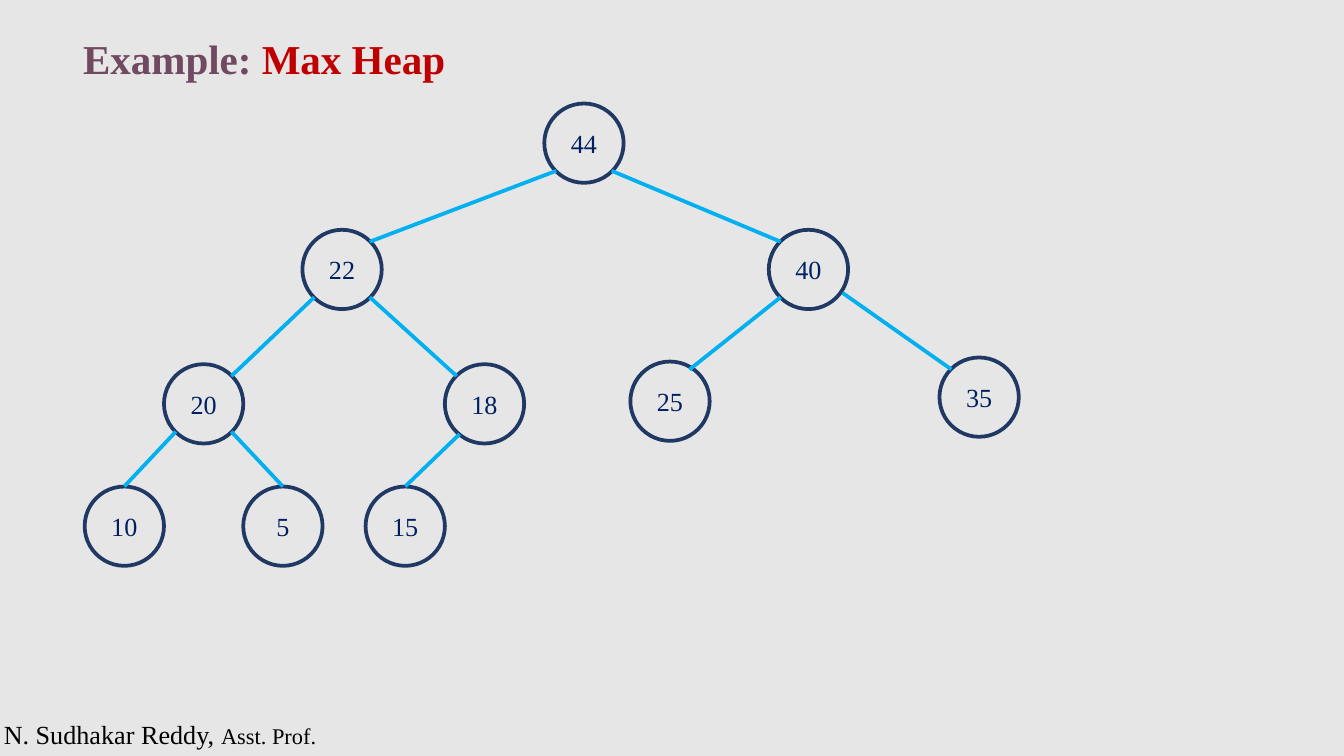
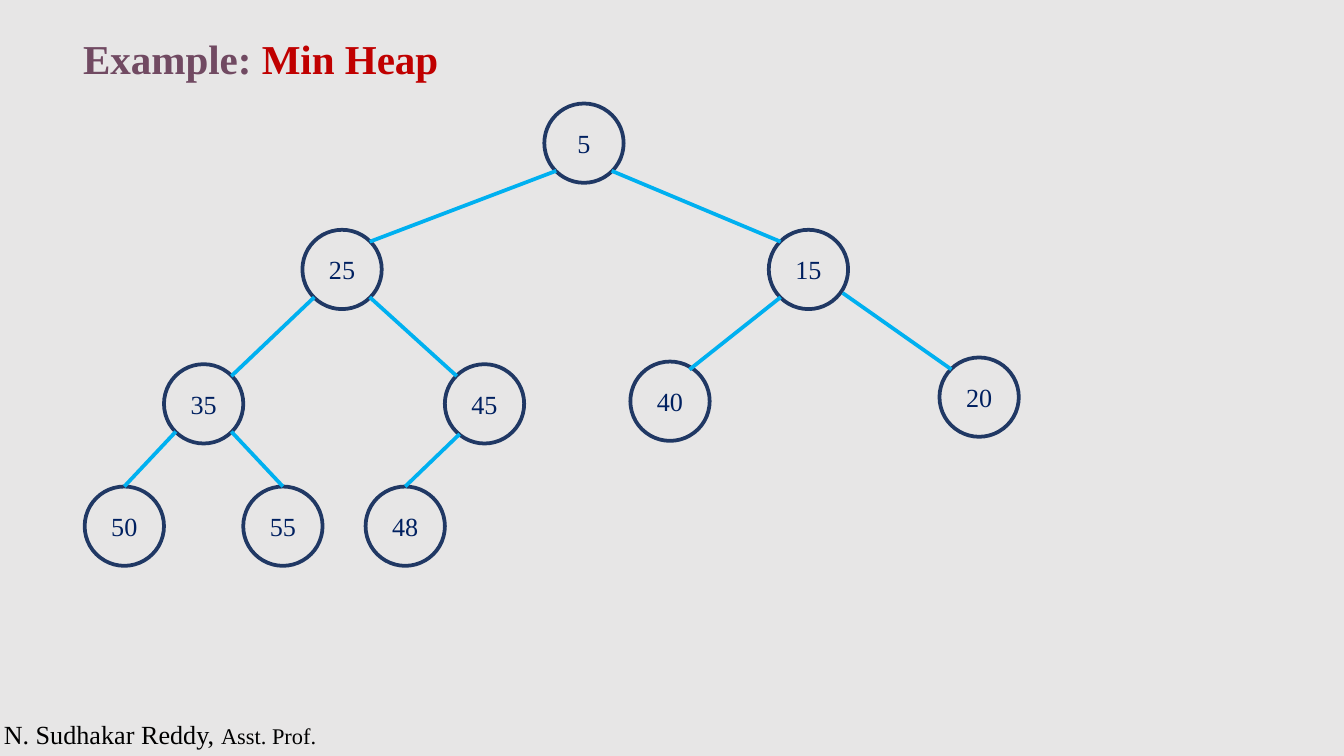
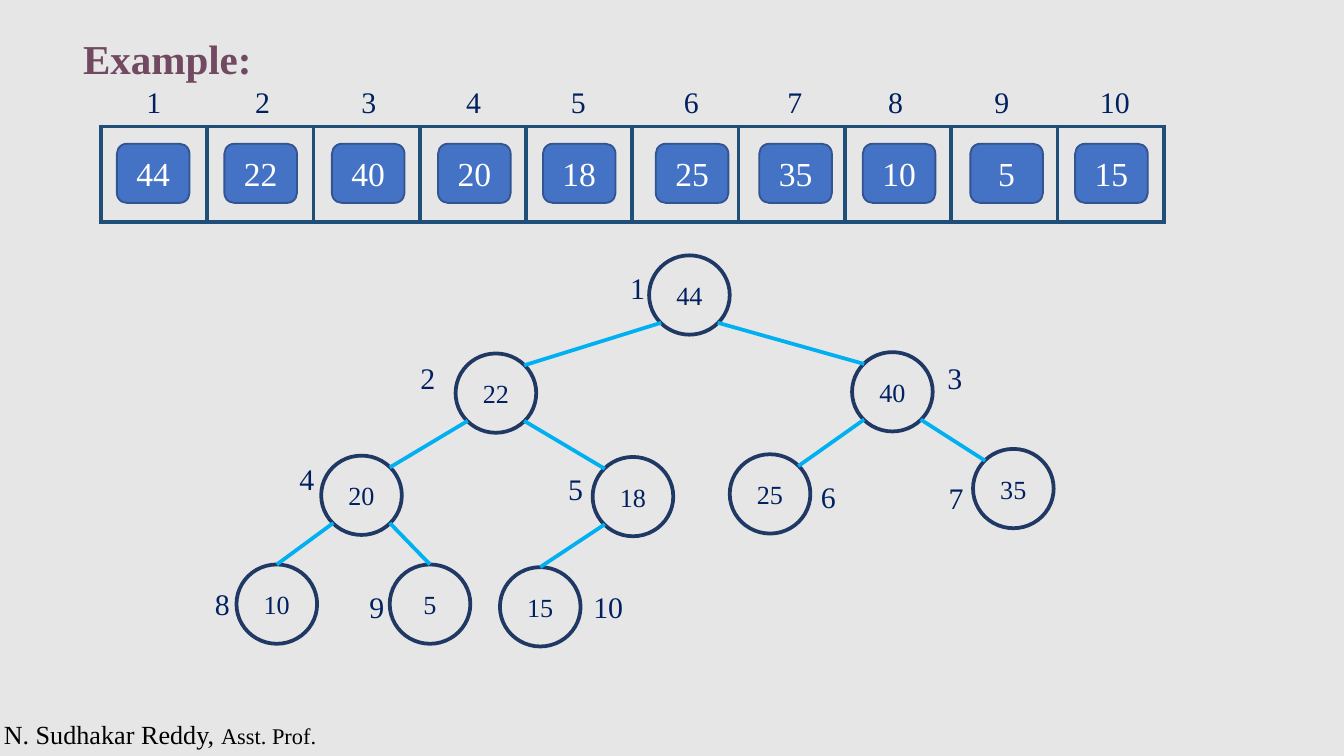
from pptx import Presentation
from pptx import util as u
from pptx.dml.color import RGBColor
from pptx.enum import shapes as kinds, text as txt
from pptx.oxml import xmlchemy

# Theme
THEME = {
    "font": "Times New Roman", "background": "E7E6E6",
    "title": {"size": 22, "color": "714A62", "bold": True},
    "heap_kind": {"size": 22, "color": "C00000", "bold": True},
    "author": {"size": 14, "color": "000000"},
    "role": {"size": 12, "color": "000000"},
    "key": {"size": 14, "color": "002060"},
    "index": {"size": 16, "color": "002060"},
    "chip": {"size": 18, "color": "FFFFFF"},
    "node_line": ("203864", 2), "edge_line": ("00B0F0", 2),
    "chip_line": ("325491", 1), "chip_fill": "4472C4",
    "cell_line": ("1F4E79", 2.25),
}

# Content: heap keys and node corners run in level order
FOOTER = [("N. Sudhakar Reddy, ", "author"), ("Asst. Prof.", "role")]
MAX_KEYS = [44, 22, 40, 20, 18, 25, 35, 10, 5, 15]
MIN_KEYS = [5, 25, 15, 35, 45, 40, 20, 50, 55, 48]
LARGE_TREE = {
    "node": (0.59, 0.59),
    "corners": [(4.05, 0.77), (2.25, 1.71), (5.72, 1.71), (1.22, 2.71), (3.31, 2.71),
                (4.69, 2.69), (6.99, 2.66), (0.63, 3.62), (1.81, 3.62), (2.72, 3.62)],
    # Edge ends that leave the usual touching points, by child
    "starts": {6: (6.27, 2.18), 9: (3.42, 3.23)},
    "ends": {5: (5.13, 2.75)},
}
INDEXED_TREE = {
    "node": (0.6, 0.59),
    "corners": [(4.83, 1.9), (3.39, 2.63), (6.34, 2.62), (2.39, 3.39), (4.41, 3.4),
                (5.43, 3.38), (7.24, 3.34), (1.76, 4.2), (2.9, 4.2), (3.72, 4.22)],
    "starts": {}, "ends": {},
}
NODE_INDEXES = [(4.59, 1.96), (3.03, 2.63), (6.95, 2.63), (2.13, 3.38), (4.13, 3.45),
                (6.01, 3.51), (6.96, 3.52), (1.5, 4.31), (2.65, 4.33), (4.15, 4.33)]
CHIP_LEFTS = [0.87, 1.67, 2.47, 3.26, 4.04, 4.88, 5.65, 6.42, 7.22, 8]
CELL_INDEX_LEFTS = [0.99, 1.8, 2.59, 3.37, 4.15, 4.99, 5.76, 6.51, 7.3, 7.92]
SLIDES = [
    {"title": [("Example: ", "title"), ("Max Heap", "heap_kind")],
     "keys": MAX_KEYS, "tree": LARGE_TREE},
    {"title": [("Example: ", "title"), ("Min Heap", "heap_kind")],
     "keys": MIN_KEYS, "tree": LARGE_TREE},
    {"title": [("Example:", "title")],
     "keys": MAX_KEYS, "tree": INDEXED_TREE, "array": True},
]
CORNER = 0.15  # where a diagonal meets the circle, as a share of its box


def inches(*lengths):
    return [u.Inches(length) for length in lengths]


def write(frame, runs, **paragraph_format):
    paragraph = frame.paragraphs[0]
    for name, value in paragraph_format.items():
        setattr(paragraph, name, value)
    for words, style in runs:
        run = paragraph.add_run()
        run.text = words
        look = THEME[style]
        font_format = {"name": THEME["font"], "size": u.Pt(look["size"]),
                       "bold": look.get("bold", False)}
        for name, value in font_format.items():
            setattr(run.font, name, value)
        run.font.color.rgb = RGBColor.from_string(look["color"])


def add_text(shapes, box, runs, grow=True, **paragraph_format):
    frame = shapes.add_textbox(*inches(*box)).text_frame
    frame.word_wrap = True
    if grow:
        frame.auto_size = txt.MSO_AUTO_SIZE.SHAPE_TO_FIT_TEXT
    write(frame, runs, **paragraph_format)


def set_line(line, look):
    line.color.rgb = RGBColor.from_string(look[0])
    line.width = u.Pt(look[1])


def add_box(shapes, preset, box, key, style, line, fill=None):
    shape = shapes.add_shape(preset, *inches(*box))
    shape.shadow.inherit = False
    if fill:
        shape.fill.solid()
        shape.fill.fore_color.rgb = RGBColor.from_string(fill)
    else:
        shape.fill.background()
    set_line(shape.line, line)
    shape.text_frame.vertical_anchor = txt.MSO_ANCHOR.MIDDLE
    write(shape.text_frame, [(str(key), style)], alignment=txt.PP_ALIGN.CENTER)


def add_indexes(shapes, corners):
    for number, corner in enumerate(corners, 1):
        wide = number == 10
        add_text(shapes, (*corner, 0.75 if wide else 0.33, 0.37), [(str(number), "index")],
                 alignment=txt.PP_ALIGN.CENTER if wide else txt.PP_ALIGN.LEFT)


def add_tree(slide, keys, tree):
    shapes = slide.shapes.add_group_shape().shapes
    corners, (width, height) = tree["corners"], tree["node"]

    def touch(node, across, down):
        left, top = corners[node]
        return left + across * width, top + down * height

    for key, corner in zip(keys, corners):
        add_box(shapes, kinds.MSO_SHAPE.OVAL, (*corner, width, height), key, "key",
                THEME["node_line"])
    for child in range(1, len(keys)):
        side = CORNER if child % 2 else 1 - CORNER
        start = tree["starts"].get(child) or touch((child - 1) // 2, side, 1 - CORNER)
        # The bottom level is met at the top of its circles
        usual_end = touch(child, 0.5, 0) if child > 6 else touch(child, 1 - side, CORNER)
        end = tree["ends"].get(child, usual_end)
        edge = shapes.add_connector(kinds.MSO_CONNECTOR.STRAIGHT, *inches(*start, *end))
        set_line(edge.line, THEME["edge_line"])
        edge._element.spPr.append(xmlchemy.OxmlElement("a:effectLst"))


def add_cell_borders(cell):
    color, points = THEME["cell_line"]
    properties = cell._tc.get_or_add_tcPr()
    for place, side in enumerate(("a:lnL", "a:lnR", "a:lnT", "a:lnB")):
        border = xmlchemy.OxmlElement(side)
        border.set("w", str(u.Pt(points)))
        fill = xmlchemy.OxmlElement("a:solidFill")
        shade = xmlchemy.OxmlElement("a:srgbClr")
        shade.set("val", color)
        fill.append(shade)
        border.append(fill)
        properties.insert(place, border)


def add_array(slide, keys):
    shapes = slide.shapes
    table = shapes.add_table(1, len(keys), *inches(0.75, 0.94, 7.91, 0.71)).table
    table.first_row = table.horz_banding = False
    for column, cell in zip(table.columns, table.rows[0].cells):
        column.width = u.Inches(7.91 / len(keys))
        cell.fill.background()
        add_cell_borders(cell)
    for key, left in zip(keys, CHIP_LEFTS):
        add_box(shapes, kinds.MSO_SHAPE.ROUNDED_RECTANGLE, (left, 1.07, 0.54, 0.44), key,
                "chip", THEME["chip_line"], THEME["chip_fill"])
    add_indexes(shapes, [(left, 0.57) for left in CELL_INDEX_LEFTS])


def main():
    deck = Presentation()
    deck.slide_width = u.Inches(10)
    deck.slide_height = deck.slide_width * 9 // 16
    backdrop = deck.slide_master.background.fill
    backdrop.solid()
    backdrop.fore_color.rgb = RGBColor.from_string(THEME["background"])

    for content in SLIDES:
        slide = deck.slides.add_slide(deck.slide_layouts[6])
        add_text(slide.shapes, (-0.07, 5.3, 3.2, 0.34), FOOTER)
        add_text(slide.shapes, (0.52, 0.24, 8.47, 0.44), content["title"], grow=False,
                 line_spacing=0.9)
        if content.get("array"):
            add_array(slide, content["keys"])
        add_tree(slide, content["keys"], content["tree"])
        if content.get("array"):
            add_indexes(slide.shapes.add_group_shape().shapes, NODE_INDEXES)
    deck.save("out.pptx")


if __name__ == "__main__":
    main()
